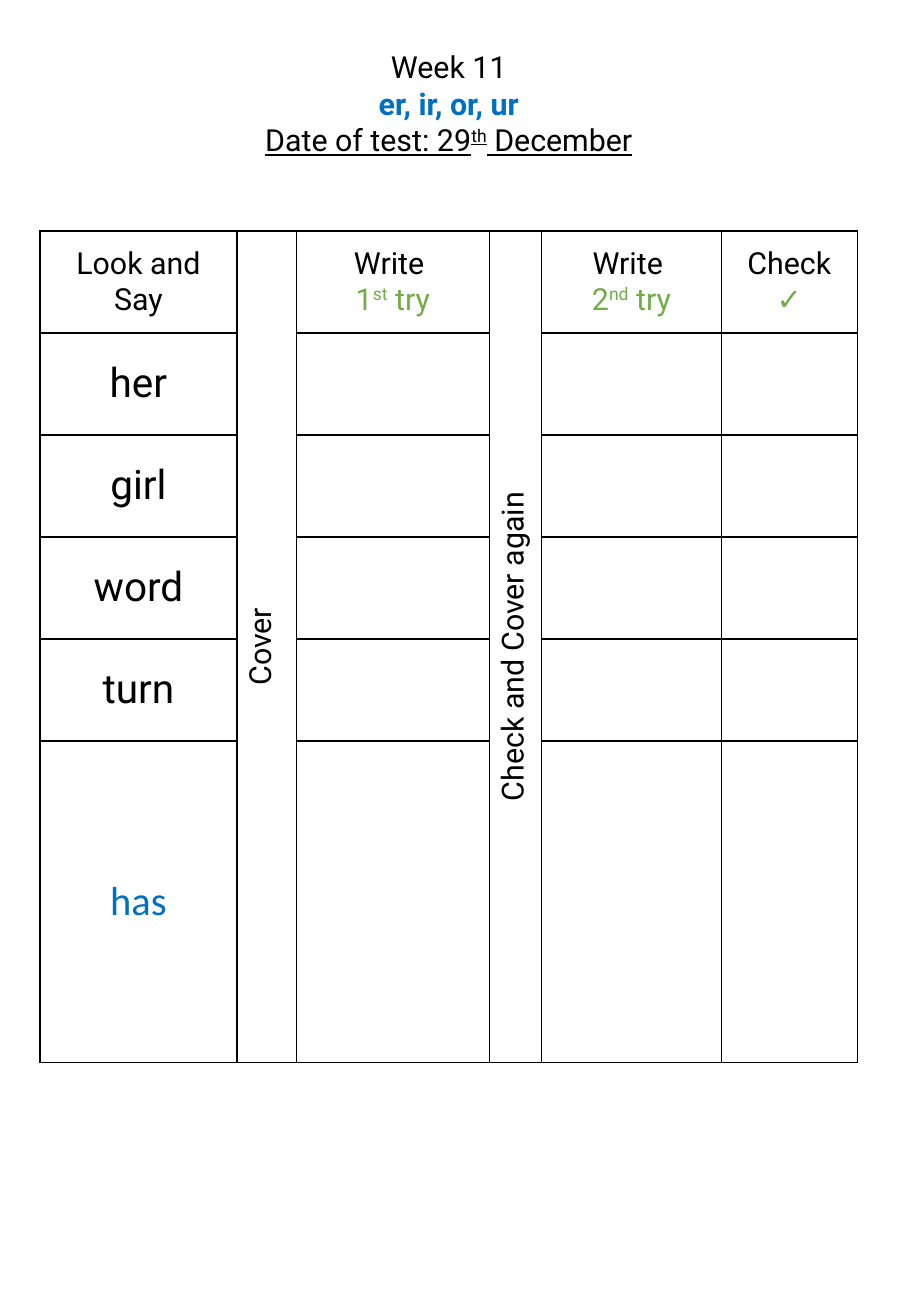
"""Build a weekly spelling test sheet with a look, cover, write and check table."""
from lxml.etree import SubElement
from pptx import Presentation
from pptx.dml.color import RGBColor
from pptx.enum.text import MSO_ANCHOR, MSO_AUTO_SIZE, PP_ALIGN
from pptx.oxml.ns import qn
from pptx.util import Inches, Pt

BLACK = RGBColor(0, 0, 0)
WHITE = RGBColor(255, 255, 255)
BLUE = RGBColor(0x00, 0x70, 0xC0)
GREEN = RGBColor(0x70, 0xAD, 0x47)


def write(frame, lines, size=18, face="Roboto"):
    """Write (parts, colour) lines, raising every second part."""
    for i, (parts, color) in enumerate(lines):
        para = frame.paragraphs[0] if i == 0 else frame.add_paragraph()
        para.alignment = PP_ALIGN.CENTER
        para.font.size = Pt(size)
        para.font.name = face
        para.font.color.rgb = color
        for j, part in enumerate(parts):
            run = para.add_run()
            run.text = part
            if j % 2:
                run._r.get_or_add_rPr().set("baseline", "30000")


def border(cell):
    """Draw a thin black line on all four sides of a cell."""
    props = cell._tc.get_or_add_tcPr()
    for side in ("lnL", "lnR", "lnT", "lnB"):
        line = SubElement(props, qn(f"a:{side}"), w=str(Pt(1)))
        fill = SubElement(line, qn("a:solidFill"))
        SubElement(fill, qn("a:srgbClr"), val=str(BLACK))


deck = Presentation()
deck.slide_width = Inches(7.5)
deck.slide_height = Inches(10.83)
slide = deck.slides.add_slide(deck.slide_layouts[5])

title = slide.shapes.title
title.left, title.top = Inches(0.33), Inches(0.35)
title.width, title.height = Inches(6.73), Inches(1.01)
frame = title.text_frame
frame.word_wrap = True
frame.auto_size = MSO_AUTO_SIZE.SHAPE_TO_FIT_TEXT
frame.vertical_anchor = MSO_ANCHOR.TOP
write(frame, [
    (["Week 11"], BLACK),
    (["er, ir, or, ur"], BLUE),
    (["Date of test: 29", "th", " December"], BLACK),
])
frame.paragraphs[1].font.bold = True
frame.paragraphs[2].font.underline = True

words = ["her", "girl", "word", "turn", "has"]
widths = [1.62, 0.49, 1.59, 0.43, 1.48, 1.12]
count = len(words) + 1
table = slide.shapes.add_table(
    count, len(widths), Inches(0.33), Inches(1.9), Inches(6.73), Inches(5.06)
).table
for col, width in zip(table.columns, widths):
    col.width = Inches(width)
for row in table.rows:
    row.height = Inches(0.84)
for cell in table.iter_cells():
    border(cell)
    cell.fill.solid()
    cell.fill.fore_color.rgb = WHITE
    cell.vertical_anchor = MSO_ANCHOR.MIDDLE

heads = [
    [(["Look and Say"], BLACK)],
    [(["Cover"], BLACK)],
    [(["Write "], BLACK), (["1", "st", " try"], GREEN)],
    [(["Check and Cover again"], BLACK)],
    [(["Write "], BLACK), (["2", "nd", " try"], GREEN)],
    [(["Check"], BLACK), (["✓"], GREEN)],
]
for i, lines in enumerate(heads):
    write(table.cell(0, i).text_frame, lines)
for i in (1, 3):
    cell = table.cell(0, i)
    cell.merge(table.cell(count - 1, i))
    cell._tc.get_or_add_tcPr().set("vert", "vert270")

for i, word in enumerate(words, 1):
    last = word == "has"
    face, color = ("Calibri", BLUE) if last else ("Roboto", BLACK)
    write(table.cell(i, 0).text_frame, [([word], color)], 24, face)

deck.save("out.pptx")
